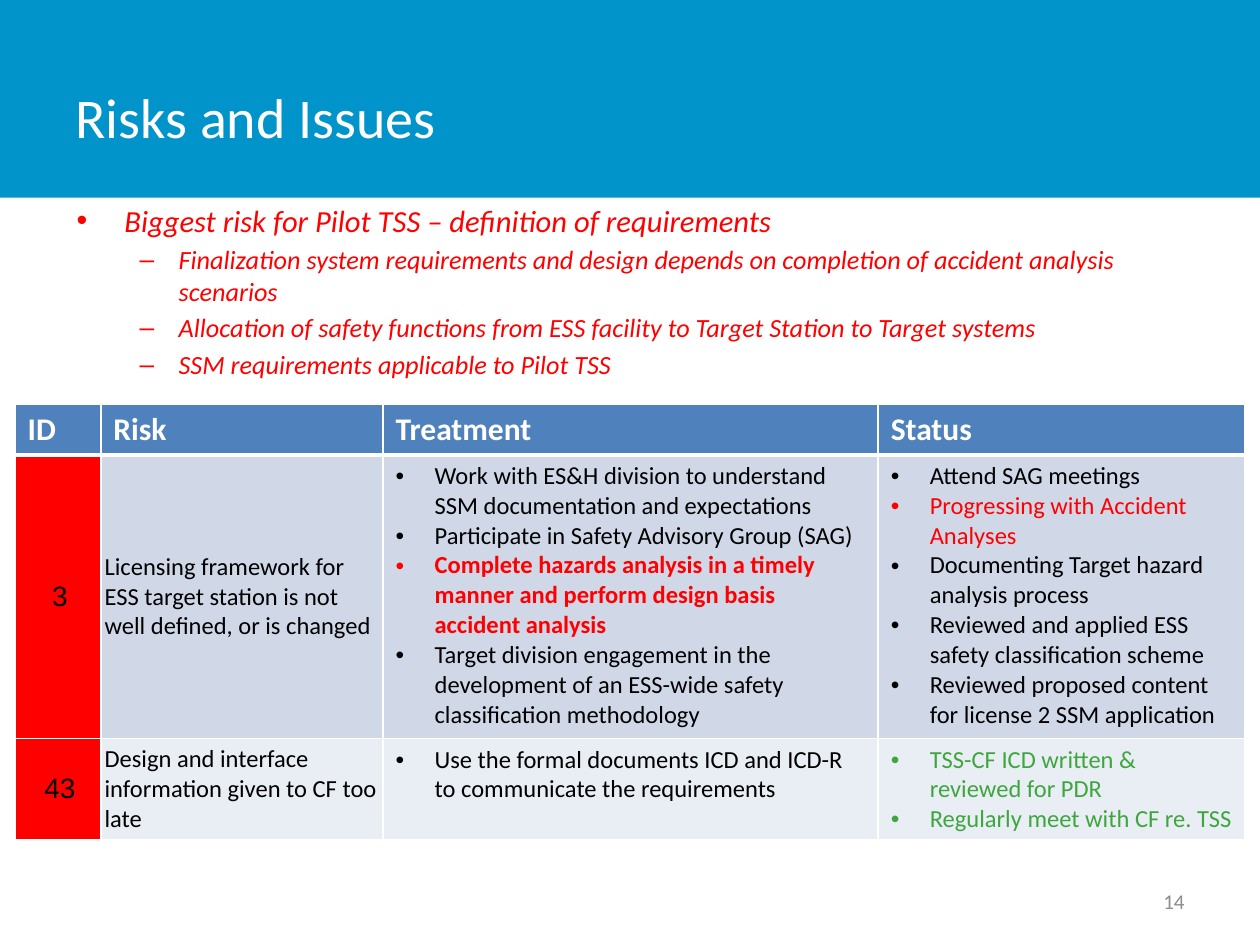
from lxml.etree import SubElement
from pptx import Presentation
from pptx.dml.color import RGBColor
from pptx.enum.shapes import MSO_SHAPE
from pptx.enum.text import MSO_ANCHOR, PP_ALIGN
from pptx.oxml.ns import qn
from pptx.util import Inches, Pt

# The page is a grid of 100 columns by 75 rows
COLUMNS, ROWS = 100, 75
UNIT = Inches(0.1)

COLORS = {
    "banner": "0094CA", "header": "4F81BD", "band": "D0D8E8", "light": "E9EDF4",
    "white": "FFFFFF", "black": "000000", "red": "FF0000", "green": "3EA63E",
    "gray": "8C8C8C",
}

RISK_POINTS = [
    "Finalization system requirements and design depends on completion of "
    "accident analysis scenarios",
    "Allocation of safety functions from ESS facility to Target Station to Target systems",
    "SSM requirements applicable to Pilot TSS",
]

HEADINGS = ["ID", "Risk", "Treatment", "Status"]
COLUMN_WIDTHS = [6.8, 22.4, 39.3, 29.1]
ROW_HEIGHTS = [3.6, 22.5, 7.2]

# Each row: ID, risk, treatments and statuses as (text, colour, bold), fill
RISKS = [
    ("3", "Licensing framework for ESS target station is not well defined, or is changed",
     [("Work with ES&H division to understand SSM documentation and expectations", "black", False),
      ("Participate in Safety Advisory Group (SAG)", "black", False),
      ("Complete hazards analysis in a timely manner and perform design basis "
       "accident analysis", "red", True),
      ("Target division engagement in the development of an ESS-wide safety "
       "classification methodology", "black", False)],
     [("Attend SAG meetings", "black", False),
      ("Progressing with Accident Analyses", "red", False),
      ("Documenting Target hazard analysis process", "black", False),
      ("Reviewed and applied ESS safety classification scheme", "black", False),
      ("Reviewed proposed content for license 2 SSM application", "black", False)],
     "band"),
    ("43", "Design and interface information given to CF too late",
     [("Use the formal documents ICD and ICD-R to communicate the requirements", "black", False)],
     [("TSS-CF ICD written & reviewed for PDR", "green", False),
      ("Regularly meet with CF re. TSS", "green", False)],
     "light"),
]


def grid(value):
    return int(value * UNIT)


def color(name):
    return RGBColor.from_string(COLORS[name])


def add_span(para, text, size, ink, bold=False, italic=False, face="Calibri"):
    span = para.add_run()
    span.text = text
    font = span.font
    font.name, font.size, font.bold, font.italic = face, Pt(size), bold, italic
    font.color.rgb = color(ink)


def add_bullet(para, mark, indent, hang):
    properties = para._p.get_or_add_pPr()
    properties.set("marL", str(grid(indent)))
    properties.set("indent", str(-grid(hang)))
    SubElement(properties, qn("a:buFont"), typeface="Arial")
    SubElement(properties, qn("a:buChar"), char=mark)


def next_para(frame, index):
    return frame.add_paragraph() if index else frame.paragraphs[0]


def add_text_box(page, box, anchor=MSO_ANCHOR.TOP):
    frame = page.shapes.add_textbox(*map(grid, box)).text_frame
    frame.word_wrap = True
    frame.vertical_anchor = anchor
    return frame


def add_banner(page, box):
    left, top, width, height = box
    banner = page.shapes.add_shape(MSO_SHAPE.RECTANGLE, *map(grid, box))
    banner.shadow.inherit = False
    banner.fill.solid()
    banner.fill.fore_color.rgb = color("banner")
    banner.line.fill.background()
    title_box = (left + 5, top + 3, width - 21.9, height - 3.2)
    frame = add_text_box(page, title_box, MSO_ANCHOR.MIDDLE)
    add_span(frame.paragraphs[0], "Risks and Issues", 32, "white")


def add_summary(page, box):
    frame = add_text_box(page, box)
    lead = frame.paragraphs[0]
    add_bullet(lead, "•", 3.8, 3.8)
    add_span(lead, "Biggest risk for Pilot TSS – definition of requirements",
             17.5, "red", italic=True)
    for text in RISK_POINTS:
        para = frame.add_paragraph()
        para.level = 1
        para.space_before = Pt(3)
        add_bullet(para, "–", 8.1, 3.1)
        add_span(para, text, 15, "red", italic=True)


def style_cell(cell, fill, top=1, bottom=1):
    # Borders come before the fill in the cell properties
    properties = cell._tc.get_or_add_tcPr()
    for side, width in (("L", 1), ("R", 1), ("T", top), ("B", bottom)):
        line = SubElement(properties, qn(f"a:ln{side}"), w=str(Pt(width)))
        paint = SubElement(line, qn("a:solidFill"))
        SubElement(paint, qn("a:srgbClr"), val=COLORS["white"])
    cell.fill.solid()
    cell.fill.fore_color.rgb = color(fill)


def fill_label(cell, text, size, face, align):
    cell.vertical_anchor = MSO_ANCHOR.MIDDLE
    cell.margin_left = grid(0.3)
    cell.margin_top = cell.margin_right = cell.margin_bottom = 0
    para = cell.text_frame.paragraphs[0]
    para.alignment = align
    add_span(para, text, size, "black", face=face)


def fill_list(cell, items):
    for index, (text, ink, bold) in enumerate(items):
        para = next_para(cell.text_frame, index)
        add_bullet(para, "•", 3.1, 3.1)
        add_span(para, text, 14, ink, bold)


def add_risk_table(page, box):
    table = page.shapes.add_table(len(ROW_HEIGHTS), len(COLUMN_WIDTHS), *map(grid, box)).table
    table.horz_banding = False
    for column, width in zip(table.columns, COLUMN_WIDTHS):
        column.width = grid(width)
    for row, height in zip(table.rows, ROW_HEIGHTS):
        row.height = grid(height)

    # Header row
    for cell, heading in zip(table.rows[0].cells, HEADINGS):
        style_cell(cell, "header", bottom=3)
        add_span(cell.text_frame.paragraphs[0], heading, 18, "white", bold=True)

    # Risk rows
    for index, (number, risk, treatments, statuses, fill) in enumerate(RISKS, 1):
        cells = list(table.rows[index].cells)
        for cell, shade in zip(cells, ["red", fill, fill, fill]):
            style_cell(cell, shade, top=3 if index == 1 else 1)
        fill_label(cells[0], number, 16, "Arial", PP_ALIGN.CENTER)
        fill_label(cells[1], risk, 14, "Calibri", PP_ALIGN.LEFT)
        fill_list(cells[2], treatments)
        fill_list(cells[3], statuses)


def add_page_number(page, box):
    para = add_text_box(page, box, MSO_ANCHOR.MIDDLE).paragraphs[0]
    para.alignment = PP_ALIGN.RIGHT
    add_span(para, "14", 12, "gray")


def main():
    deck = Presentation()
    deck.slide_width, deck.slide_height = grid(COLUMNS), grid(ROWS)
    page = deck.slides.add_slide(deck.slide_layouts[6])
    add_banner(page, (0, 0, COLUMNS, 15.7))
    add_summary(page, (5.1, 15.5, 90, 14.2))
    add_page_number(page, (71.7, 69.5, 23.3, 4))
    add_risk_table(page, (1.2, 32.1, sum(COLUMN_WIDTHS), sum(ROW_HEIGHTS)))
    deck.save("out.pptx")


if __name__ == "__main__":
    main()
